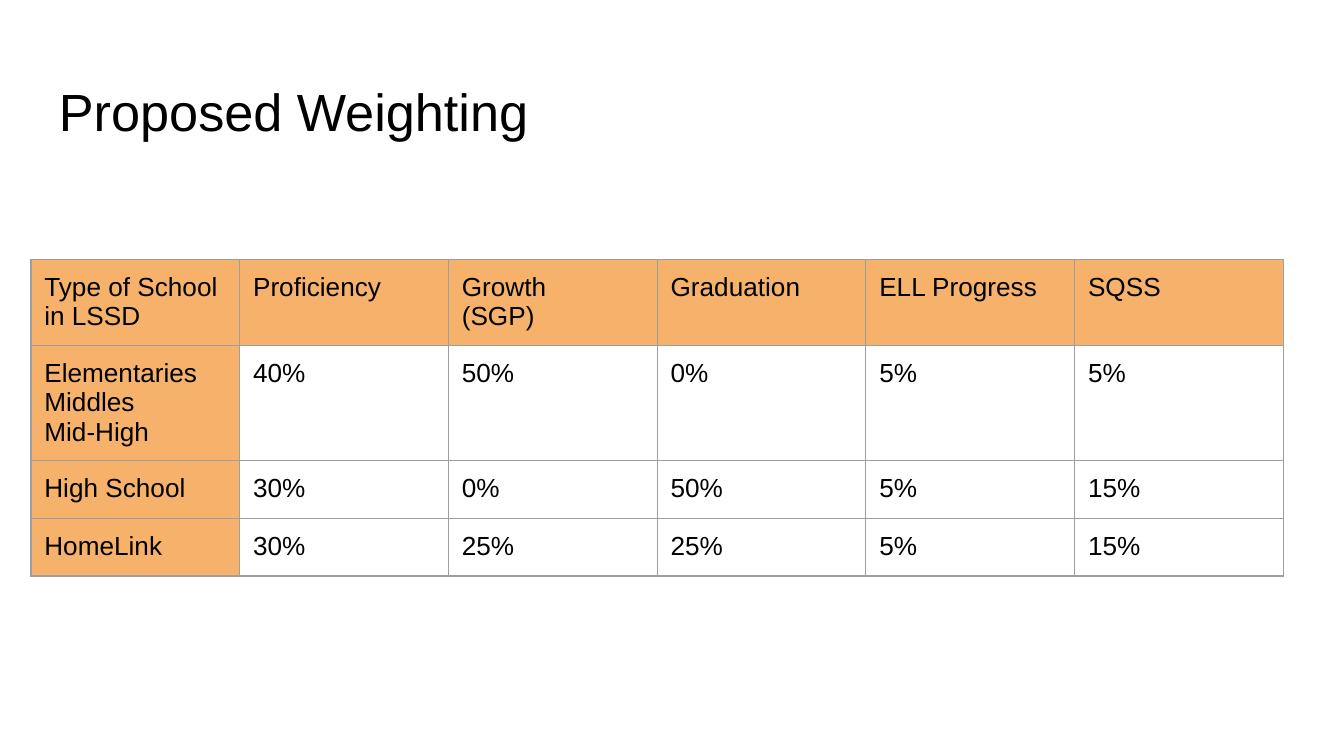
from lxml import etree
from pptx import Presentation
from pptx.dml.color import RGBColor
from pptx.enum.text import MSO_ANCHOR, PP_ALIGN
from pptx.oxml.ns import qn
from pptx.util import Inches, Pt

TOP = MSO_ANCHOR.TOP
LEFT = PP_ALIGN.LEFT
BLACK = RGBColor(0x00, 0x00, 0x00)
ORANGE = RGBColor(0xF6, 0xB2, 0x6B)
GRAY = RGBColor(0x9E, 0x9E, 0x9E)

TITLE = "Proposed Weighting"
WEIGHTS = [
    ["Type of School in LSSD", "Proficiency", "Growth\n(SGP)", "Graduation", "ELL Progress", "SQSS"],
    ["Elementaries\nMiddles\nMid-High", "40%", "50%", "0%", "5%", "5%"],
    ["High School", "30%", "0%", "50%", "5%", "15%"],
    ["HomeLink", "30%", "25%", "25%", "5%", "15%"],
]
PAGE_WIDTH = Inches(10)
PAGE_HEIGHT = PAGE_WIDTH * 9 // 16
CONTENT_WIDTH = Inches(9.32)
ROW_HEIGHTS = [0.64, 0.85, 0.43, 0.43]
INSETS = {f"margin_{side}": Inches(0.1) for side in ("left", "top", "right", "bottom")}
TITLE_FONT = {"name": "Arial", "size": Pt(28)}
TABLE_FONT = {"name": "Arial", "size": Pt(14)}


def apply(target, values):
    for name, value in values.items():
        setattr(target, name, value)


def write(frame, text, font):
    frame.text = text
    for para in frame.paragraphs:
        para.alignment = LEFT
        for span in para.runs:
            apply(span.font, font)
            span.font.color.rgb = BLACK


def add_borders(cell):
    properties = cell._tc.get_or_add_tcPr()
    for side in ("a:lnL", "a:lnR", "a:lnT", "a:lnB"):
        line = etree.SubElement(properties, qn(side), w=str(Pt(0.75)))
        fill = etree.SubElement(line, qn("a:solidFill"))
        etree.SubElement(fill, qn("a:srgbClr"), val=str(GRAY))


def add_title(page):
    box = page.shapes.add_textbox(Inches(0.34), Inches(0.49), CONTENT_WIDTH, Inches(0.63))
    apply(box.text_frame, {**INSETS, "word_wrap": True, "vertical_anchor": TOP})
    write(box.text_frame, TITLE, TITLE_FONT)


def add_weights(page):
    column_count = len(WEIGHTS[0])
    table = page.shapes.add_table(
        len(WEIGHTS), column_count, Inches(0.23), Inches(1.93),
        CONTENT_WIDTH, Inches(sum(ROW_HEIGHTS)),
    ).table
    for column in table.columns:
        column.width = CONTENT_WIDTH // column_count
    for row_index, (height, texts) in enumerate(zip(ROW_HEIGHTS, WEIGHTS)):
        table.rows[row_index].height = Inches(height)
        for column_index, text in enumerate(texts):
            cell = table.cell(row_index, column_index)
            apply(cell, {**INSETS, "vertical_anchor": TOP})
            write(cell.text_frame, text, TABLE_FONT)
            add_borders(cell)
            if row_index == 0 or column_index == 0:
                cell.fill.solid()
                cell.fill.fore_color.rgb = ORANGE
            else:
                cell.fill.background()


def main():
    deck = Presentation()
    deck.slide_width, deck.slide_height = PAGE_WIDTH, PAGE_HEIGHT
    page = deck.slides.add_slide(deck.slide_layouts[6])
    add_weights(page)
    add_title(page)
    deck.save("out.pptx")


if __name__ == "__main__":
    main()
